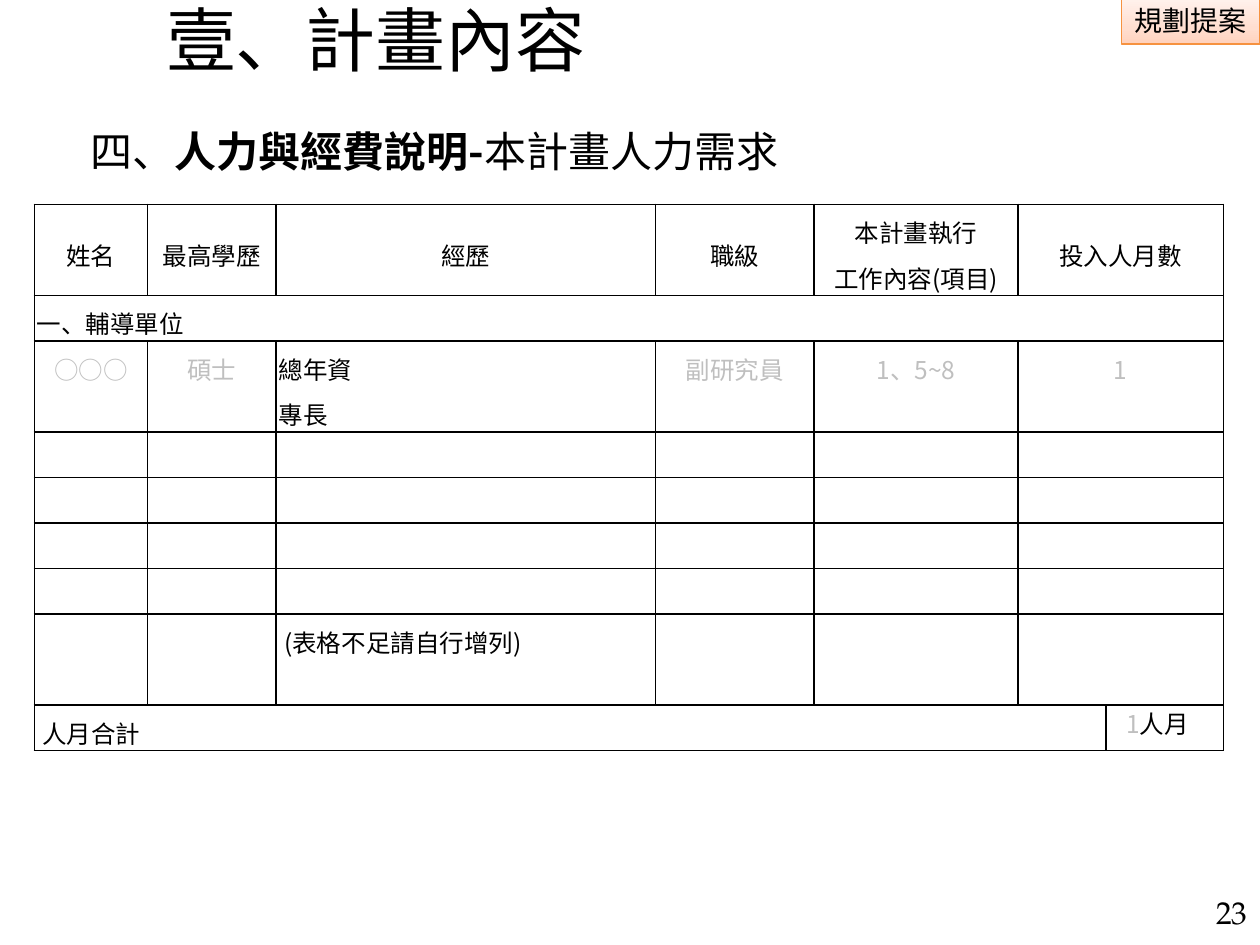
from dataclasses import dataclass
from copy import deepcopy

import pptx
import pptx.dml.color
import pptx.enum.shapes
import pptx.enum.text
import pptx.oxml.ns
import pptx.util
from lxml import etree

Pt = pptx.util.Pt
Align = pptx.enum.text.PP_ALIGN
Anchor = pptx.enum.text.MSO_ANCHOR
qn = pptx.oxml.ns.qn

CJK = "Noto Sans CJK SC"
BLACK, GREY = "000000", "BFBFBF"
LINE = 26
COLUMNS = [64.8, 73.4, 216.7, 90.7, 116.6, 50.4, 67]
ROW_LINES = [2, 1, 2, 1, 1, 1, 1, 2, 1]


@dataclass
class Span:
    text: str
    color: str = BLACK
    bold: bool = False


@dataclass
class Label:
    spans: list[Span]
    left: float
    top: float
    width: float
    height: float
    size: float
    font: str = CJK
    align: Align = Align.LEFT
    anchor: Anchor = Anchor.TOP
    spacing: float | pptx.util.Length = 0.9
    indent: float = 0


@dataclass
class Entry:
    row: int
    column: int
    lines: list[list[Span]]
    align: Align | None = Align.CENTER
    anchor: Anchor = Anchor.TOP
    inset: float = 1.4
    spacing: pptx.util.Length | None = Pt(LINE)


def rgb(value: str) -> pptx.dml.color.RGBColor:
    return pptx.dml.color.RGBColor.from_string(value)


def write_spans(para, spans: list[Span], size: float, font: str = CJK) -> None:
    for span in spans:
        run = para.add_run()
        run.text = span.text
        run.font.size = Pt(size)
        run.font.bold = span.bold
        run.font.color.rgb = rgb(span.color)
        run.font.name = font
        east_asian = etree.SubElement(run.font._element, qn("a:ea"))
        east_asian.set("typeface", font)


def add_label(page, label: Label) -> None:
    box = page.shapes.add_textbox(
        Pt(label.left), Pt(label.top), Pt(label.width), Pt(label.height))
    frame = box.text_frame
    frame.word_wrap = True
    frame.vertical_anchor = label.anchor
    frame.margin_left = Pt(7.2 + label.indent)
    para = frame.paragraphs[0]
    para.alignment = label.align
    para.line_spacing = label.spacing
    write_spans(para, label.spans, label.size, label.font)


def add_tag(page, text: str) -> None:
    tag = page.shapes.add_shape(
        pptx.enum.shapes.MSO_SHAPE.RECTANGLE, Pt(640.8), Pt(-1.4), Pt(79.2), Pt(26.6))
    tag.shadow.inherit = False
    tag.line.color.rgb = rgb("F69240")
    tag.line.width = Pt(0.75)
    tag.fill.gradient()
    tag.fill.gradient_angle = 90
    stop_list = tag.fill._fill._gradFill.find(qn("a:gsLst"))
    stop_list.append(deepcopy(stop_list[-1]))
    stops = [(0, "FFD2BD"), (0.35, "FFDED0"), (1, "FFF2ED")]
    for stop, (position, color) in zip(tag.fill.gradient_stops, stops):
        stop.position = position
        stop.color.rgb = rgb(color)
    frame = tag.text_frame
    frame.word_wrap = False
    frame.vertical_anchor = Anchor.MIDDLE
    frame.paragraphs[0].alignment = Align.CENTER
    write_spans(frame.paragraphs[0], [Span(text)], 16)


def style_cell(cell) -> None:
    properties = cell._tc.get_or_add_tcPr()
    for side in ("a:lnL", "a:lnR", "a:lnT", "a:lnB"):
        border = etree.SubElement(properties, qn(side), w=str(Pt(1)))
        solid = etree.SubElement(border, qn("a:solidFill"))
        etree.SubElement(solid, qn("a:srgbClr"), val=BLACK)
    cell.fill.background()
    cell.margin_left = cell.margin_right = Pt(1.4)
    cell.margin_top = cell.margin_bottom = 0
    cell.text_frame.paragraphs[0].line_spacing = Pt(LINE)


def fill_cell(table, entry: Entry) -> None:
    cell = table.cell(entry.row, entry.column)
    cell.vertical_anchor = entry.anchor
    cell.margin_left = Pt(entry.inset)
    frame = cell.text_frame
    for index, spans in enumerate(entry.lines):
        para = frame.add_paragraph() if index else frame.paragraphs[0]
        para.alignment = entry.align
        para.line_spacing = entry.spacing
        write_spans(para, spans, 14)


def add_staff_table(page, entries: list[Entry]) -> None:
    frame = page.shapes.add_table(
        len(ROW_LINES), len(COLUMNS), Pt(19.6), Pt(116.8),
        Pt(sum(COLUMNS)), Pt(LINE * sum(ROW_LINES)))
    table = frame.table
    table.first_row = table.horz_banding = False
    for column, width in zip(table.columns, COLUMNS):
        column.width = Pt(width)
    for row, lines in zip(table.rows, ROW_LINES):
        row.height = Pt(LINE * lines)
    for cell in table.iter_cells():
        style_cell(cell)

    # Section row, total row, and the two-column month field elsewhere
    last = len(ROW_LINES) - 1
    for row in range(len(ROW_LINES)):
        first, end = {1: (0, 6), last: (0, 5)}.get(row, (5, 6))
        table.cell(row, first).merge(table.cell(row, end))
    for entry in entries:
        fill_cell(table, entry)


def main() -> None:
    deck = pptx.Presentation()
    deck.slide_width, deck.slide_height = Pt(720), Pt(540)
    page = deck.slides.add_slide(deck.slide_layouts[6])

    # Tag, page number and headings
    add_tag(page, "規劃提案")
    labels = [
        Label([Span("23")], 658.1, 511.9, 61.9, 28.1, 18, "TeX Gyre Pagella",
              Align.RIGHT, Anchor.MIDDLE, Pt(12)),
        Label([Span("壹、計畫內容")], 87.8, 0, 481.7, 49, 40),
        Label([Span("四、"), Span("人力與經費說明-", bold=True), Span("本計畫人力需求")],
              8.6, 71.3, 553, 36, 24, indent=36),
    ]
    for label in labels:
        add_label(page, label)

    # Staffing table
    headers = ["姓名", "最高學歷", "經歷", "職級", "本計畫執行\n工作內容(項目)", "投入人月數"]
    entries = [
        Entry(0, column, [[Span(line)] for line in text.split("\n")], anchor=Anchor.MIDDLE)
        for column, text in enumerate(headers)
    ]
    sample = {0: "○○○", 1: "碩士", 3: "副研究員", 4: "1、5~8", 5: "1"}
    entries += [Entry(2, column, [[Span(text, GREY)]]) for column, text in sample.items()]
    entries += [
        Entry(1, 0, [[Span("一、輔導單位")]], Align.JUSTIFY),
        Entry(2, 2, [[Span("總年資")], [Span("專長")]], Align.JUSTIFY),
        Entry(7, 2, [[Span("(表格不足請自行增列)")]], Align.JUSTIFY, inset=4.6),
        Entry(8, 0, [[Span("人月合計")]], Align.LEFT, inset=4.6),
        Entry(8, 6, [[Span("1", GREY), Span("人月")]], Align.LEFT, inset=11.4, spacing=None),
    ]
    add_staff_table(page, entries)

    deck.save("out.pptx")


if __name__ == "__main__":
    main()
